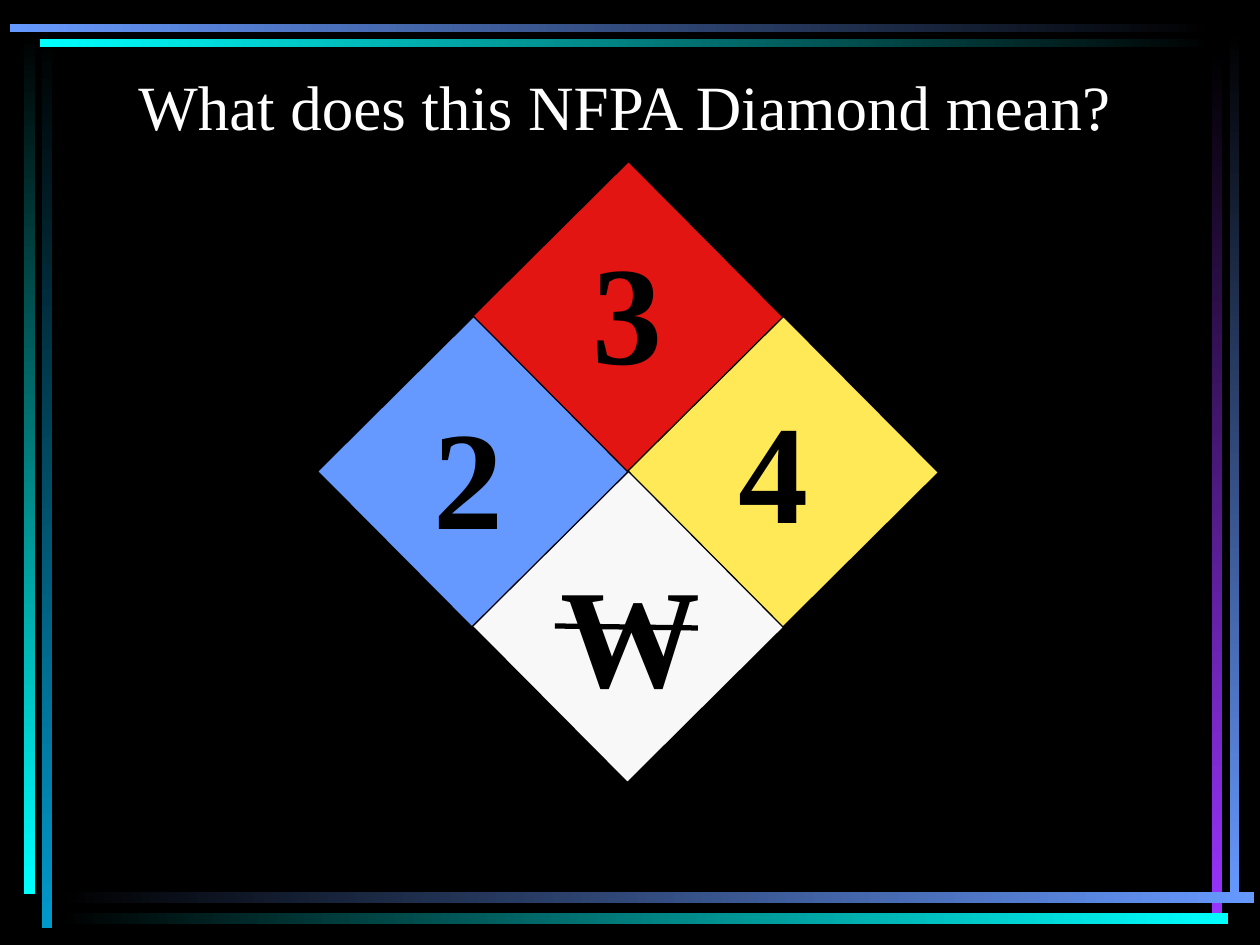
import pptx
import pptx.util
import pptx.dml.color
import pptx.enum.shapes
import pptx.enum.text
import lxml.etree

PX = 914400 // 126
THEME = {
    "font": "Times New Roman", "title_size": 36, "rating_size": 80,
    "black": "000000", "white": "FFFFFF", "cyan": "00FFFF", "teal": "0099CC",
    "blue": "6699FF", "violet": "9933FF", "red": "E31512",
    "yellow": "FFE957", "pale": "F8F8F8",
}
RIGHT, DOWN = 0, 270

BARS = [
    ((42, 35, 10, 893), "black", "teal", DOWN),
    ((24, 31, 11, 863), "black", "cyan", DOWN),
    ((1230, 30, 9, 873), "black", "blue", DOWN),
    ((1212, 53, 10, 861), "black", "violet", DOWN),
    ((57, 892, 1197, 11), "black", "blue", RIGHT),
    ((57, 913, 1171, 11), "black", "cyan", RIGHT),
    ((40, 39, 1175, 8), "cyan", "black", RIGHT),
    ((10, 24, 1205, 8), "blue", "black", RIGHT),
]
TITLE = ("What does this NFPA Diamond mean?", (126, 59, 1031, 90))
CENTER, STEP, SIDE, TILT = (628, 472), 155, 220, 45.2
TILES = [("red", 0, -1), ("blue", -1, 0), ("yellow", 1, 0), ("pale", 0, 1)]
RATINGS = [
    ("3", (581, 263, 94, 136)),
    ("2", (421, 428, 94, 136)),
    ("W", (549, 586, 163, 136)),
    ("4", (727, 422, 94, 136)),
]
STRIKE = (555, 626, 698, 628)


def emu(values):
    return [v * PX for v in values]


def rgb(name):
    return pptx.dml.color.RGBColor.from_string(THEME[name])


def apply(obj, formats):
    for name, value in formats.items():
        setattr(obj, name, value)


def add_rect(s, box):
    sp = s.shapes.add_shape(pptx.enum.shapes.MSO_SHAPE.RECTANGLE, *emu(box))
    sp.shadow.inherit = False
    return sp


def add_bar(s, box, start, end, angle):
    sp = add_rect(s, box)
    sp.line.fill.background()
    sp.fill.gradient()
    sp.fill.gradient_angle = angle
    for stop, name, position in zip(sp.fill.gradient_stops, (start, end), (0, 1)):
        stop.color.rgb = rgb(name)
        stop.position = position


def add_tile(s, color, dx, dy):
    x, y = CENTER
    sp = add_rect(s, (x + dx * STEP - SIDE // 2, y + dy * STEP - SIDE // 2, SIDE, SIDE))
    sp.rotation = TILT
    sp.fill.solid()
    sp.fill.fore_color.rgb = rgb(color)
    sp.line.color.rgb = rgb("black")
    sp.line.width = pptx.util.Pt(0.75)


def add_text(s, text, box, size, color, align, **formats):
    tf = s.shapes.add_textbox(*emu(box)).text_frame
    apply(tf, {"word_wrap": True, "vertical_anchor": pptx.enum.text.MSO_ANCHOR.BOTTOM, **formats})
    p = tf.paragraphs[0]
    p.alignment = align
    r = p.add_run()
    r.text = text
    apply(r.font, {"name": THEME["font"], "size": pptx.util.Pt(THEME[size]),
                   "bold": size == "rating_size"})
    r.font.color.rgb = rgb(color)


def add_strike(s, ends):
    sp = s.shapes.add_connector(pptx.enum.shapes.MSO_CONNECTOR.STRAIGHT, *emu(ends))
    sp.line.color.rgb = rgb("black")
    sp.line.width = pptx.util.Pt(3)
    lxml.etree.SubElement(sp._element.spPr, pptx.oxml.ns.qn("a:effectLst"))


def main():
    prs = pptx.Presentation()
    prs.slide_width, prs.slide_height = emu((1260, 945))
    s = prs.slides.add_slide(prs.slide_layouts[6])
    s.background.fill.solid()
    s.background.fill.fore_color.rgb = rgb("black")
    align = pptx.enum.text.PP_ALIGN
    for bar in BARS:
        add_bar(s, *bar)
    add_text(s, *TITLE, "title_size", "white", align.LEFT)
    for tile in TILES:
        add_tile(s, *tile)
    for text, box in RATINGS:
        add_text(s, text, box, "rating_size", "black", align.CENTER,
                 margin_left=0, margin_right=0)
    add_strike(s, STRIKE)
    prs.save("out.pptx")


if __name__ == "__main__":
    main()
